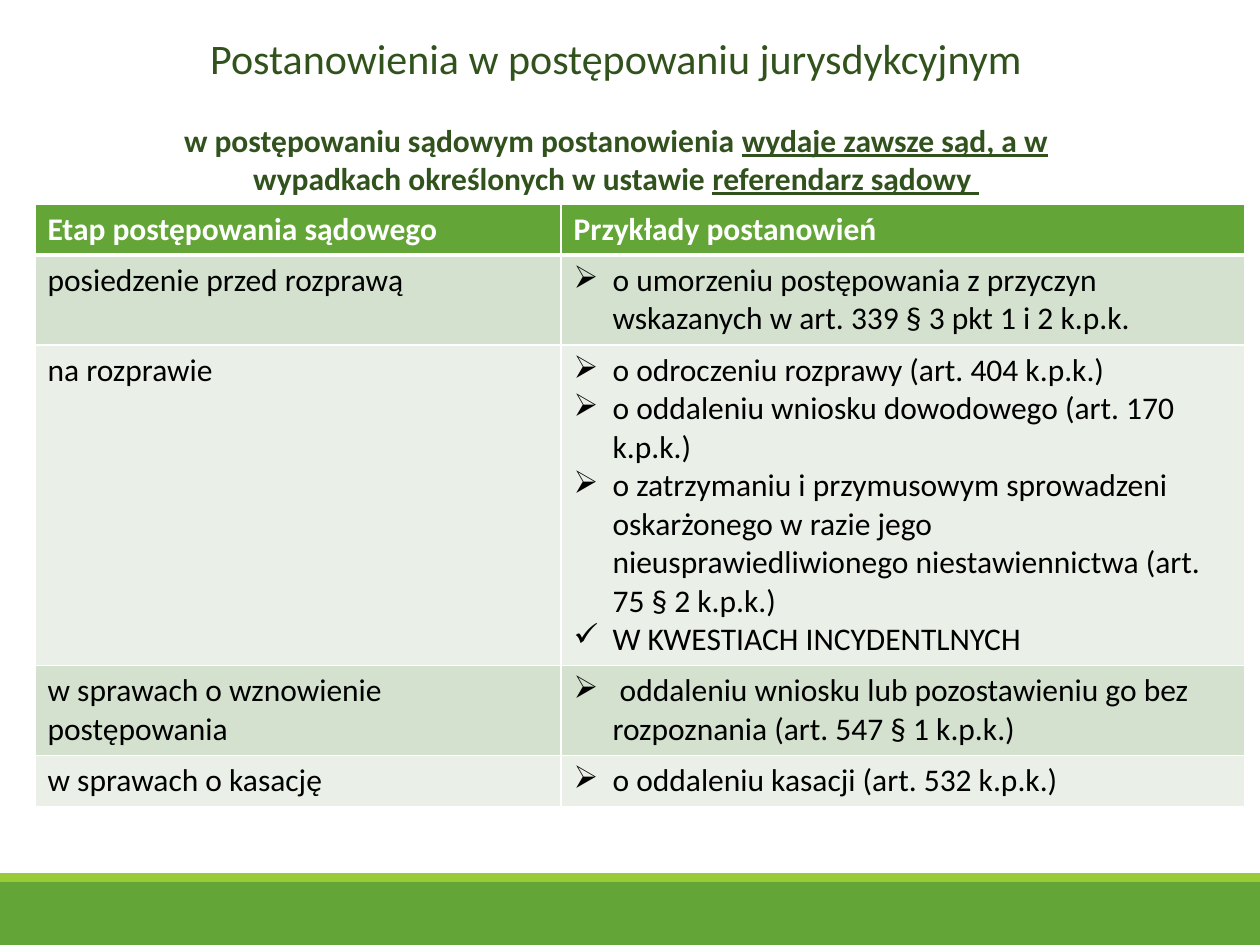
from lxml import etree
from pptx import Presentation, util as u
from pptx.dml.color import RGBColor
from pptx.enum import shapes, text
from pptx.oxml import ns

FONT = "Calibri"
GREEN, LIME, DARK_GREEN = "63A537", "99CB38", "31521C"
WHITE, BLACK = "FFFFFF", "000000"
BANDS = ("D3E1CE", "EAF0E8")
ARROW, CHECK = "➢", "✓"
COLUMN_WIDTHS = (526, 684)
HEADINGS = ("Etap postępowania sądowego", "Przykłady postanowień")
STAGES = [
    ("posiedzenie przed rozprawą", 90, [
        (ARROW, "o umorzeniu postępowania z przyczyn wskazanych w art. 339 § 3 pkt 1 i 2 k.p.k.")]),
    ("na rozprawie", 320, [
        (ARROW, "o odroczeniu rozprawy (art. 404 k.p.k.)"),
        (ARROW, "o oddaleniu wniosku dowodowego (art. 170 k.p.k.)"),
        (ARROW, "o zatrzymaniu i przymusowym sprowadzeni oskarżonego w razie jego "
                "nieusprawiedliwionego niestawiennictwa (art. 75 § 2 k.p.k.)"),
        (CHECK, "W KWESTIACH INCYDENTLNYCH")]),
    ("w sprawach o wznowienie postępowania", 90, [
        (ARROW, " oddaleniu wniosku lub pozostawieniu go bez rozpoznania (art. 547 § 1 k.p.k.)")]),
    ("w sprawach o kasację", 50, [
        (ARROW, "o oddaleniu kasacji (art. 532 k.p.k.)")]),
]
SUBTITLE = [
    ("w postępowaniu sądowym postanowienia ", False),
    ("wydaje zawsze sąd, a w ", True),
    ("wypadkach określonych w ustawie ", False),
    ("referendarz sądowy ", True),
]


def px(length):
    return u.Emu(round(length * 914400 / 126))


def color(value):
    return RGBColor.from_string(value)


def style(paragraph, size, value, bold=False):
    font = paragraph.font
    font.name, font.size, font.bold = FONT, u.Pt(size), bold
    font.color.rgb = color(value)


def add_band(slide, top, height, value):
    band = slide.shapes.add_shape(
        shapes.MSO_SHAPE.RECTANGLE, 0, px(top), px(1260), px(height))
    band.shadow.inherit = False
    band.fill.solid()
    band.fill.fore_color.rgb = color(value)
    band.line.fill.background()


def set_bullet(paragraph, symbol):
    properties = paragraph._p.get_or_add_pPr()
    properties.set("marL", str(px(39)))
    properties.set("indent", str(px(-39)))
    bullet = etree.SubElement(properties, ns.qn("a:buChar"))
    bullet.set("char", symbol)


def set_borders(cell, top, bottom):
    properties = cell._tc.get_or_add_tcPr()
    for side, width in (("L", 1), ("R", 1), ("T", top), ("B", bottom)):
        border = etree.SubElement(properties, ns.qn(f"a:ln{side}"), w=str(u.Pt(width)))
        fill = etree.SubElement(border, ns.qn("a:solidFill"))
        etree.SubElement(fill, ns.qn("a:srgbClr"), val=WHITE)


def fill_cell(cell, items, background, ink, bold=False, top=1, bottom=1):
    set_borders(cell, top, bottom)
    cell.fill.solid()
    cell.fill.fore_color.rgb = color(background)
    cell.text = "\n".join(wording for _, wording in items)
    for paragraph, (symbol, _) in zip(cell.text_frame.paragraphs, items):
        style(paragraph, 18, ink, bold)
        if symbol:
            set_bullet(paragraph, symbol)


def add_rulings(slide):
    heights = [50] + [height for _, height, _ in STAGES]
    rulings = slide.shapes.add_table(
        len(heights), 2, px(35), px(204), px(sum(COLUMN_WIDTHS)), px(sum(heights))).table
    for column, width in zip(rulings.columns, COLUMN_WIDTHS):
        column.width = px(width)
    for row, height in zip(rulings.rows, heights):
        row.height = px(height)
    for column, heading in enumerate(HEADINGS):
        fill_cell(rulings.cell(0, column), [(None, heading)], GREEN, WHITE, True, bottom=3)
    for row, (stage, _, examples) in enumerate(STAGES, 1):
        for column, items in enumerate(([(None, stage)], examples)):
            fill_cell(rulings.cell(row, column), items, BANDS[(row - 1) % 2], BLACK,
                      top=3 if row == 1 else 1)


def add_heading(slide):
    frame = slide.shapes.add_textbox(px(105), px(26), px(1022), px(178)).text_frame
    frame.word_wrap = True
    title = frame.paragraphs[0]
    title.text = "Postanowienia w postępowaniu jurysdykcyjnym"
    style(title, 24, DARK_GREEN)
    subtitle = frame.add_paragraph()
    subtitle.space_before = u.Pt(22)
    style(subtitle, 18, DARK_GREEN, True)
    for wording, underlined in SUBTITLE:
        run = subtitle.add_run()
        run.text = wording
        run.font.underline = underlined
    for paragraph in (title, subtitle):
        paragraph.alignment = text.PP_ALIGN.CENTER


def main():
    deck = Presentation()
    deck.slide_width, deck.slide_height = px(1260), px(945)
    slide = deck.slides.add_slide(deck.slide_layouts[6])
    add_band(slide, 882, 63, GREEN)
    add_band(slide, 873, 9, LIME)
    add_rulings(slide)
    add_heading(slide)
    deck.save("out.pptx")


if __name__ == "__main__":
    main()
